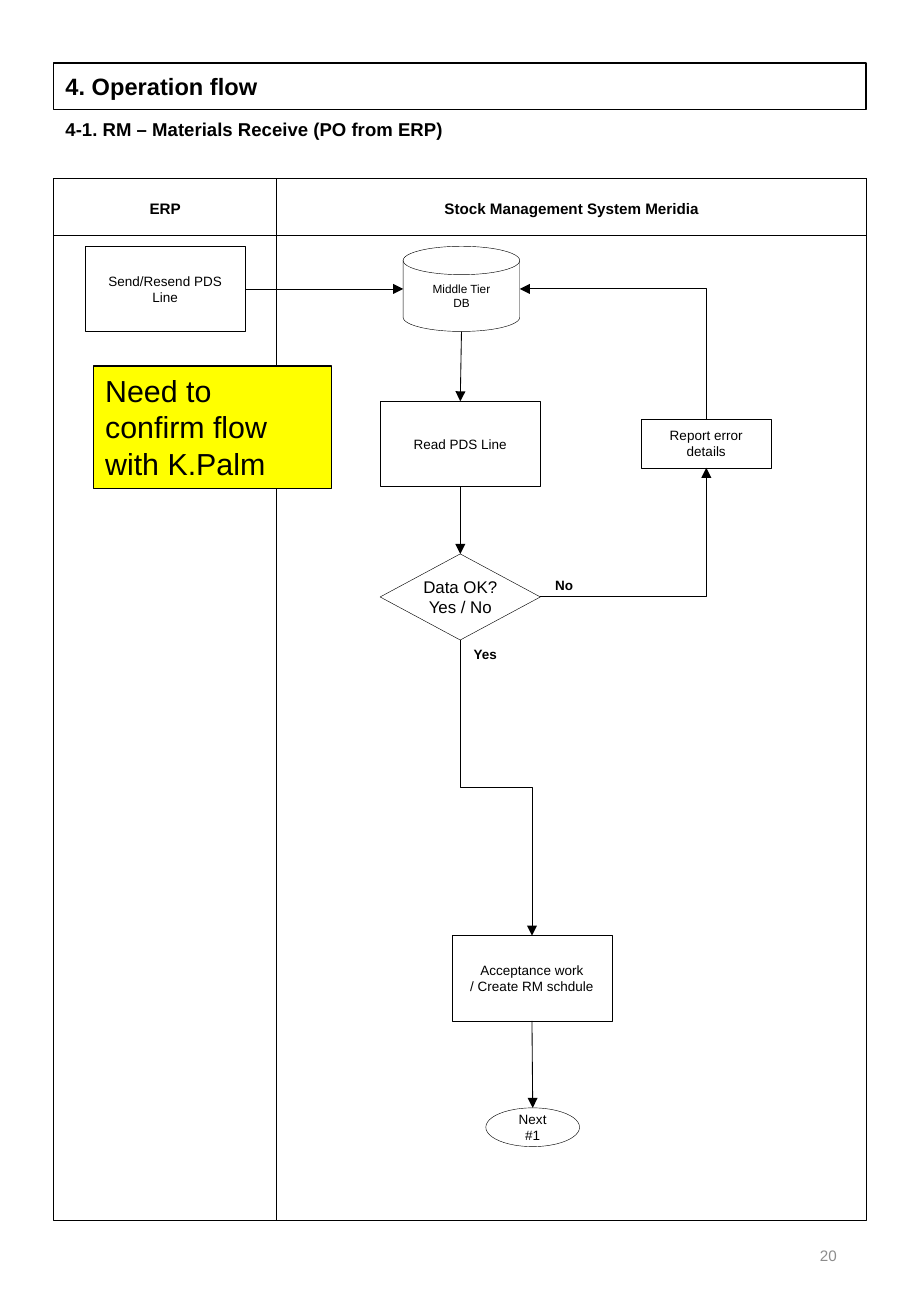
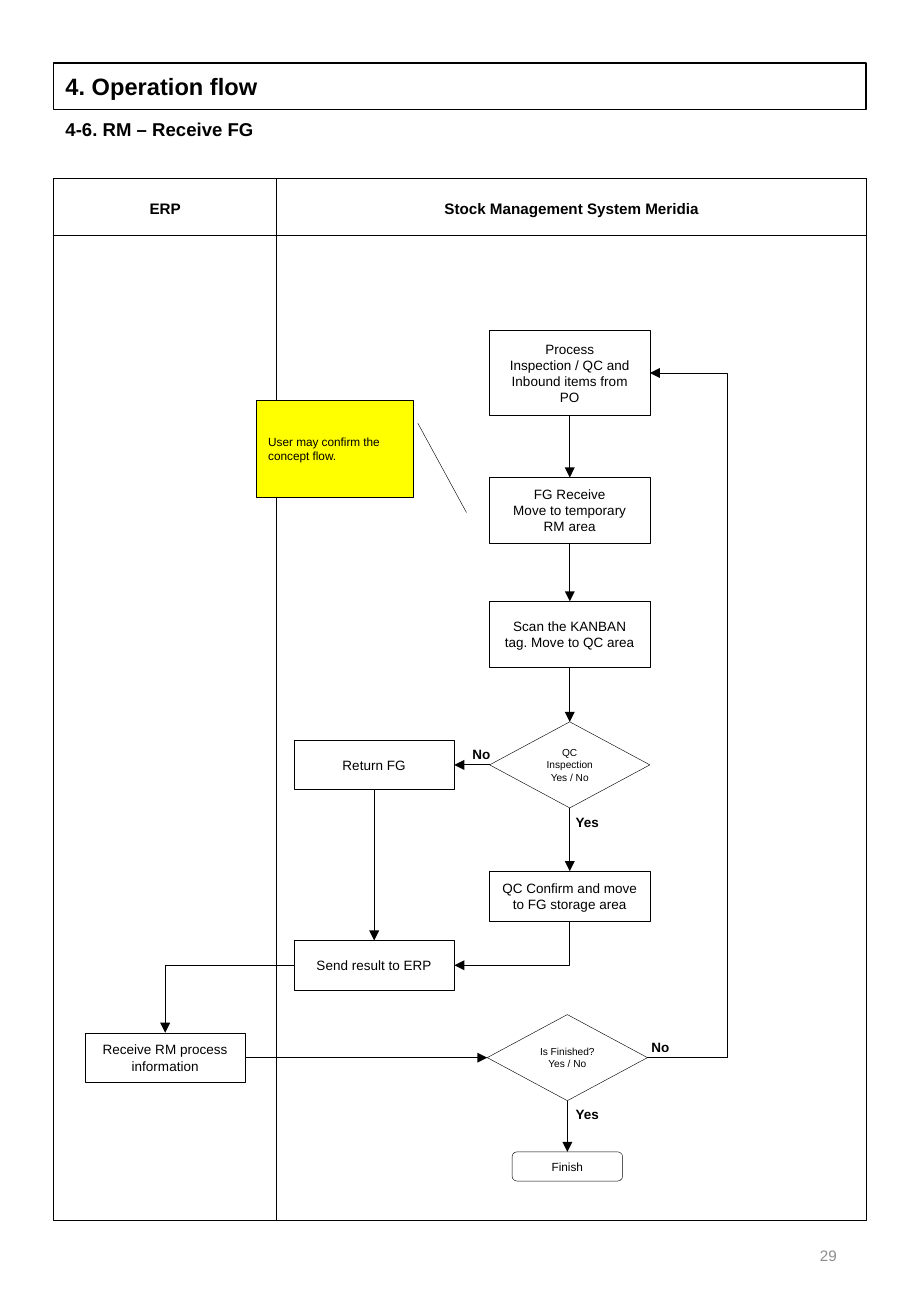
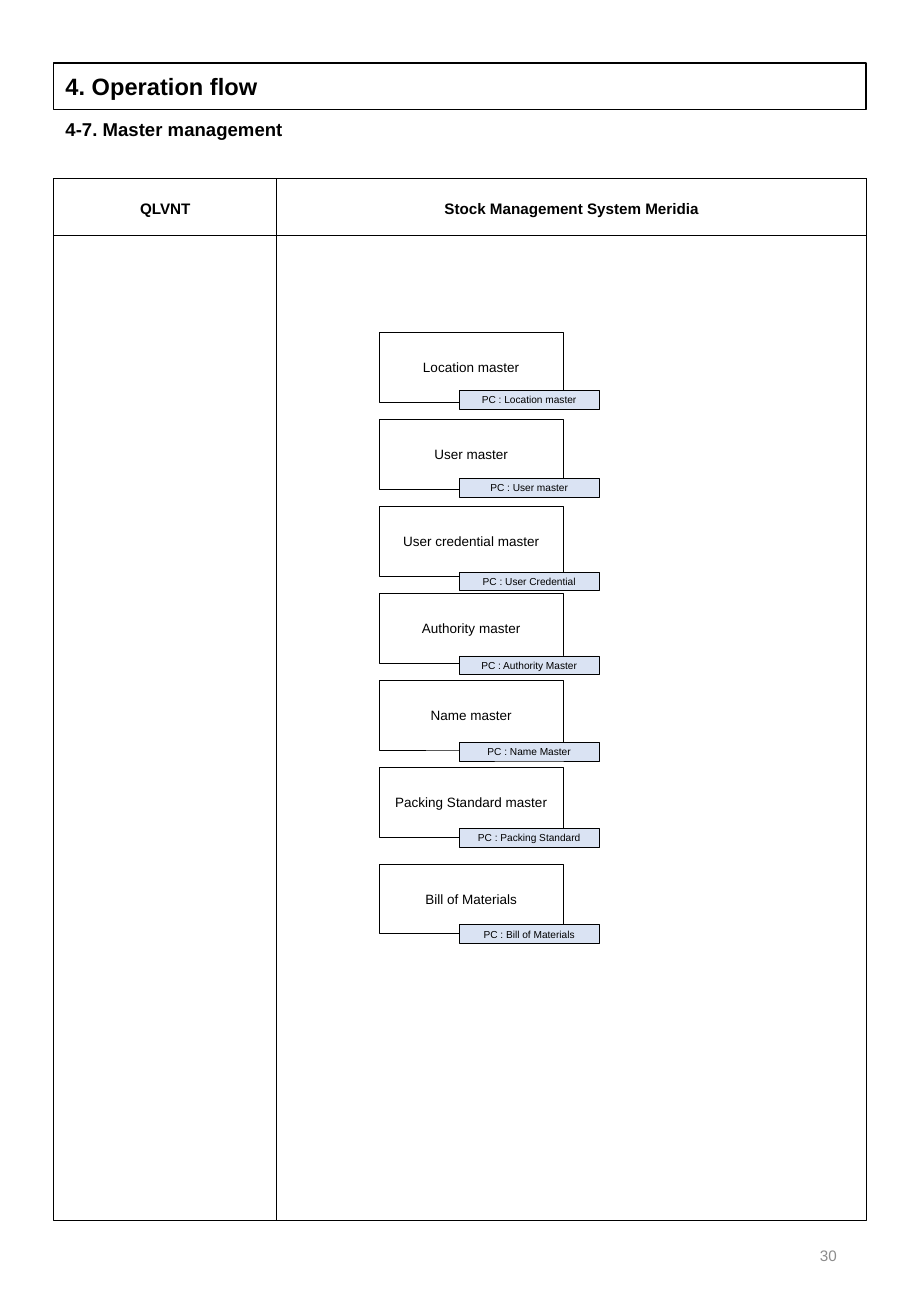
from lxml import etree
from pptx import Presentation
from pptx.dml.color import RGBColor
from pptx.enum import shapes as sh, text as tx
from pptx.oxml.ns import qn
from pptx.util import Cm, Pt

BLACK = RGBColor(0, 0, 0)
WHITE = RGBColor(255, 255, 255)
GREY = RGBColor(0x8C, 0x8C, 0x8C)
YELLOW = RGBColor(255, 255, 0)
BLUE = RGBColor(0xDA, 0xE3, 0xF3)
FONT = "Arial"
KIND = sh.MSO_SHAPE
RECT, GEM = KIND.RECTANGLE, KIND.FLOWCHART_DECISION
GLUE = (RECT, GEM, KIND.ROUNDED_RECTANGLE)
LEFT, MID, RIGHT = tx.PP_ALIGN.LEFT, tx.PP_ALIGN.CENTER, tx.PP_ALIGN.RIGHT
TOP, WEST, BOTTOM, EAST = range(4)

# Shared frame, in cm
X, WIDE, SPLIT = 1.12, 16.99, 5.79
HEAD, BAND, FOOT = 3.73, 1.19, 25.5
W, H, GEM_H = 3.35, 1.78, 1.8
SYSTEM = "Stock Management System Meridia"

# Steps: name, (left, top, width, height), text, format
RECEIVE = [
    ("read", (7.95, 8.39, W, H), "Read PDS Line", {}),
    ("check", (7.95, 11.58, W, GEM_H), "Data OK?\nYes / No",
     dict(kind=GEM, size=10, side=0)),
    ("next", (10.16, 23.16, 1.96, 0.81), "Next #1", dict(kind=KIND.OVAL)),
    ("send", (1.78, 5.15, W, H), "Send/Resend PDS Line", {}),
    ("report", (13.41, 8.76, 2.72, 1.02), "Report error details",
     dict(fill=WHITE)),
    ("accept", (9.45, 19.56, W, H), "Acceptance work\n/ Create RM schdule", {}),
    ("base", (8.43, 5.15, 2.44, H), "Middle Tier\nDB",
     dict(kind=KIND.FLOWCHART_MAGNETIC_DISK, size=7)),
    ("note", (1.95, 7.65, 4.98, 2.57), "Need to confirm flow with K.Palm",
     dict(fill=YELLOW, line=0.75, size=18, align=LEFT,
          anchor=tx.MSO_ANCHOR.TOP)),
]
RECEIVE_TAGS = [("Yes", 9.5, 13.39), ("No", 11.15, 11.94)]
RECEIVE_LINES = [
    ("send", EAST, "base", WEST), ("base", BOTTOM, "read", TOP),
    ("read", BOTTOM, "check", TOP), ("accept", BOTTOM, "next", TOP),
]

GOODS = [
    ("process", (10.24, 6.91, W, H),
     "Process\nInspection / QC and\nInbound items from PO", {}),
    ("move", (10.24, 9.98, W, 1.37), "FG Receive\nMove to temporary RM area", {}),
    ("scan", (10.24, 12.57, W, 1.37), "Scan the KANBAN tag. Move to QC area", {}),
    ("check", (10.24, 15.09, W, GEM_H), "QC Inspection\nYes / No",
     dict(kind=GEM, size=6)),
    ("store", (10.24, 18.21, W, 1.04),
     "QC Confirm and move to FG storage area", {}),
    ("return", (6.15, 15.47, W, 1.04), "Return FG", {}),
    ("send", (6.15, 19.66, W, 1.04), "Send result to ERP", {}),
    ("get", (1.78, 21.59, W, 1.04), "Receive RM process information", {}),
    ("done", (10.19, 21.21, W, GEM_H), "Is Finished?\nYes / No",
     dict(kind=GEM, size=6)),
    ("finish", (10.71, 24.08, 2.31, 0.61), "Finish",
     dict(kind=KIND.ROUNDED_RECTANGLE, size=7)),
    ("note", (5.36, 8.36, 3.28, 2.03), "User may confirm the concept flow.",
     dict(kind=KIND.LINE_CALLOUT_1, fill=YELLOW, size=7, align=LEFT)),
]
GOODS_TAGS = [("Yes", 11.63, 23.01), ("No", 13.16, 21.59),
              ("Yes", 11.63, 16.89), ("No", 9.42, 15.47)]
GOODS_LINES = [
    ("process", BOTTOM, "move", TOP), ("move", BOTTOM, "scan", TOP),
    ("scan", BOTTOM, "check", TOP), ("check", BOTTOM, "store", TOP),
    ("check", WEST, "return", EAST), ("return", BOTTOM, "send", TOP),
    ("get", EAST, "done", WEST), ("done", BOTTOM, "finish", TOP),
]
LANE = 15.21

# Master screens: box text, tag text, top of tag
MASTERS = [
    ("Location master", "Location master", 8.16),
    ("User master", "User master", 10),
    ("User credential master", "User Credential", 11.96),
    ("Authority master", "Authority Master", 13.71),
    ("Name master", "Name Master", 15.52),
    ("Packing Standard master", "Packing Standard", 17.32),
    ("Bill of Materials", "Bill of Materials", 19.33),
]


def write(frame, words, size=8, bold=False, color=BLACK, align=MID,
          anchor=tx.MSO_ANCHOR.MIDDLE, side=0.25):
    frame.word_wrap = True
    frame.vertical_anchor = anchor
    frame.margin_left = frame.margin_right = Cm(side)
    frame.margin_top = frame.margin_bottom = Cm(0.13)
    frame.text = words
    for para in frame.paragraphs:
        para.alignment = align
        font = para.font
        font.name, font.size, font.bold = FONT, Pt(size), bold
        font.color.rgb = color


def label(page, at, words, **style):
    write(page.shapes.add_textbox(*map(Cm, at)).text_frame, words, **style)


def box(page, at, words="", kind=RECT, fill=None, line=0.25, **style):
    item = page.shapes.add_shape(kind, *map(Cm, at))
    item.shadow.inherit = False
    if fill is None:
        item.fill.background()
    else:
        item.fill.solid()
        item.fill.fore_color.rgb = fill
    item.line.color.rgb = BLACK
    item.line.width = Pt(line)
    if words:
        write(item.text_frame, words, **style)
    return item


def side_mid(item, side):
    """Middle of one side of a shape."""
    fx, fy = ((0.5, 0), (0, 0.5), (0.5, 1), (1, 0.5))[side]
    return int(item.left + item.width * fx), int(item.top + item.height * fy)


def join(page, start, end, kind=sh.MSO_CONNECTOR.STRAIGHT, tip="tailEnd"):
    link = page.shapes.add_connector(kind, *start, *end)
    link.line.color.rgb = BLACK
    link.line.width = Pt(0.5)
    props = link._element.spPr
    if tip:
        etree.SubElement(props.find(qn("a:ln")), qn("a:" + tip), type="triangle")
    etree.SubElement(props, qn("a:effectLst"))
    return link


def arrow(page, a, out, b, into):
    link = join(page, side_mid(a, out), side_mid(b, into))
    if a.auto_shape_type in GLUE:
        link.begin_connect(a, out)
    if b.auto_shape_type in GLUE:
        link.end_connect(b, into)


def corner(page, a, out, b, into, tip="tailEnd"):
    """One bend: sideways from a, then up or down to b."""
    link = join(page, side_mid(a, out), side_mid(b, into),
                sh.MSO_CONNECTOR.ELBOW, tip)
    link._element.spPr.find(qn("a:prstGeom")).set("prst", "bentConnector2")


def detour(page, a, b, lane):
    """Out of a's right side, along the lane, back into b's right side."""
    start, end = side_mid(a, EAST), side_mid(b, EAST)
    link = join(page, start, end, sh.MSO_CONNECTOR.ELBOW)
    bend = round((Cm(lane) - start[0]) / (end[0] - start[0]) * 100000)
    guides = link._element.spPr.find(qn("a:prstGeom")).find(qn("a:avLst"))
    etree.SubElement(guides, qn("a:gd"), name="adj1", fmla=f"val {bend}")


def step_down(page, a, b):
    """Down from a, right, and down to b: a turned and mirrored elbow."""
    (x1, y1), (x2, y2) = side_mid(a, BOTTOM), side_mid(b, TOP)
    link = join(page, (x1, y1), (x2, y2), sh.MSO_CONNECTOR.ELBOW)
    long, short = y2 - y1, x2 - x1
    link.left, link.top = (x1 + x2 - long) // 2, (y1 + y2 - short) // 2
    link.width, link.height = long, short
    turn = link._element.spPr.find(qn("a:xfrm"))
    turn.set("rot", "5400000")
    turn.set("flipV", "1")


def sheet(deck, number, title, lane):
    """Page with heading, two-lane frame and page number."""
    page = deck.slides.add_slide(deck.slide_layouts[6])
    label(page, (13.46, FOOT, 4.29, 1.47), number, size=9, color=GREY, align=RIGHT)
    box(page, (X, 1.32, WIDE, 0.97), "4. Operation flow", line=1, size=14,
        bold=True, align=LEFT)
    label(page, (X, 2.34, WIDE, 0.74), title, size=11, bold=True, align=LEFT,
          anchor=tx.MSO_ANCHOR.TOP)
    for tall in (FOOT - HEAD, BAND):
        box(page, (X, HEAD, WIDE, tall))
    for left, right, words in ((X, SPLIT, lane), (SPLIT, X + WIDE, SYSTEM)):
        label(page, (left, HEAD + 0.03, right - left, BAND), words, size=9, bold=True)
    join(page, (Cm(SPLIT), Cm(HEAD)), (Cm(SPLIT), Cm(FOOT)), tip=None)
    return page


def flow(page, steps, tags, lines):
    items = {name: box(page, at, words, **style)
             for name, at, words, style in steps}
    for a, out, b, into in lines:
        arrow(page, items[a], out, items[b], into)
    for words, left, top in tags:
        label(page, (left, top, 1.3, 0.58), words, bold=True)
    return items


def main():
    deck = Presentation()
    deck.slide_width, deck.slide_height = Cm(19.05), Cm(27.51)

    # Materials receive
    page = sheet(deck, "20", "4-1. RM – Materials Receive (PO from ERP)", "ERP")
    it = flow(page, RECEIVE, RECEIVE_TAGS, RECEIVE_LINES)
    corner(page, it["check"], EAST, it["report"], BOTTOM)
    corner(page, it["base"], EAST, it["report"], TOP, tip="headEnd")
    step_down(page, it["check"], it["accept"])

    # Finished goods
    page = sheet(deck, "29", "4-6. RM – Receive FG", "ERP")
    it = flow(page, GOODS, GOODS_TAGS, GOODS_LINES)
    for i, value in enumerate((0.24, 1.03, 1.16, 1.34)):
        it["note"].adjustments[i] = value
    corner(page, it["send"], WEST, it["get"], TOP)
    corner(page, it["send"], EAST, it["store"], BOTTOM, tip="headEnd")
    detour(page, it["done"], it["process"], LANE)

    # Master screens; the last one stands a little apart
    page = sheet(deck, "30", "4-7. Master management", "QLVNT")
    for i, (name, screen, top) in enumerate(MASTERS):
        gap = 0.2 if i == len(MASTERS) - 1 else 0
        box(page, (7.94, 6.94 + 1.82 * i + gap, 3.83, 1.46), name)
    for name, screen, top in MASTERS:
        box(page, (9.6, top, 2.93, 0.39), "PC : " + screen, fill=BLUE, size=6)

    deck.save("out.pptx")


if __name__ == "__main__":
    main()
